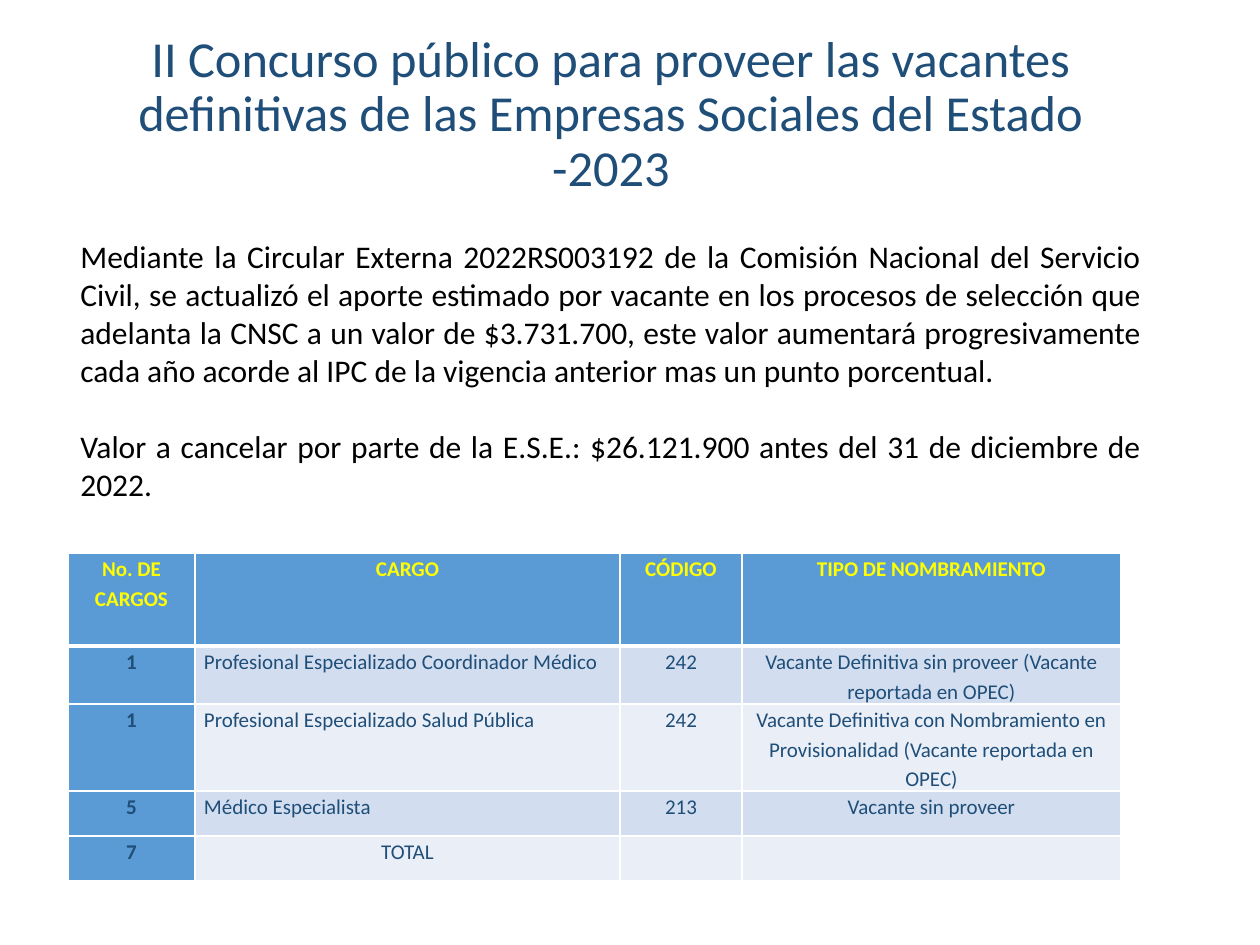
from dataclasses import dataclass
from lxml.etree import SubElement as Sub
from pptx import Presentation
from pptx.dml.color import RGBColor as RGB
from pptx.enum.text import MSO_ANCHOR as Anchor, PP_ALIGN as Align
from pptx.oxml.ns import qn
from pptx.util import Pt

TITLE = ("II Concurso público para proveer las vacantes definitivas "
         "de las Empresas Sociales del Estado -2023")
BODY = [
    "Mediante la Circular Externa 2022RS003192 de la Comisión Nacional del "
    "Servicio Civil, se actualizó el aporte estimado por vacante en los "
    "procesos de selección que adelanta la CNSC a un valor de $3.731.700, "
    "este valor aumentará progresivamente cada año acorde al IPC de la "
    "vigencia anterior mas un punto porcentual.",
    "Valor a cancelar por parte de la E.S.E.: $26.121.900 antes del 31 de "
    "diciembre de 2022.",
]
ROWS = [
    ("No. DE CARGOS", "CARGO", "CÓDIGO", "TIPO DE NOMBRAMIENTO"),
    ("1", "Profesional Especializado Coordinador Médico", "242",
     "Vacante Definitiva sin proveer (Vacante reportada en OPEC)"),
    ("1", "Profesional Especializado Salud Pública", "242",
     "Vacante Definitiva con Nombramiento en Provisionalidad "
     "(Vacante reportada en OPEC)"),
    ("5", "Médico Especialista", "213", "Vacante sin proveer"),
    ("7", "TOTAL", "", ""),
]
WIDTHS = [127, 425, 122, 379]
HEIGHTS = [93, 38, 64, 45, 45]
LEFT, WIDE = 68, 1086


@dataclass(frozen=True)
class Theme:
    font: str = "Calibri"
    navy: str = "1F4E79"
    black: str = "000000"
    yellow: str = "FFFF00"
    white: str = "FFFFFF"
    blue: str = "5B9BD5"
    bands: tuple = ("EAEFF7", "D2DEEF")
    head: float = 28.8
    body: int = 18
    cell: int = 12


T = Theme()


def px(n):
    return round(n * 914400 / 126)


def style(para, size, color, align, bold=False):
    para.alignment = align
    font = para.font
    font.name, font.size, font.bold = T.font, Pt(size), bold
    font.color.rgb = RGB.from_string(color)


def text_box(slide, top, high, texts, size, color, align):
    box = slide.shapes.add_textbox(px(LEFT), px(top), px(WIDE), px(high))
    frame = box.text_frame
    frame.word_wrap = True
    frame.text = "\n".join(texts)
    for para in frame.paragraphs:
        style(para, size, color, align)
    return frame


def edge(cell, head):
    props = cell._tc.get_or_add_tcPr()
    for i, side in enumerate("LRTB"):
        wide = 3 if head and side == "B" else 1
        line = Sub(props, qn(f"a:ln{side}"), w=str(Pt(wide)))
        fill = Sub(line, qn("a:solidFill"))
        Sub(fill, qn("a:srgbClr"), val=T.white)
        props.insert(i, line)


def fill_cell(cell, text, row, col):
    head = row == 0
    strong = head or col == 0
    cell.margin_left = cell.margin_right = px(9)
    cell.margin_top = cell.margin_bottom = 0
    cell.fill.solid()
    tone = T.blue if strong else T.bands[row % 2]
    cell.fill.fore_color.rgb = RGB.from_string(tone)
    edge(cell, head)
    if text:
        cell.text = text
        para = cell.text_frame.paragraphs[0]
        para.line_spacing, para.space_after = 1.15, Pt(8)
        just = col == 1 and 0 < row < len(ROWS) - 1
        style(para, T.cell, T.yellow if head else T.navy,
              Align.JUSTIFY if just else Align.CENTER, strong)


def add_grid(slide):
    grid = slide.shapes.add_table(
        len(ROWS), len(WIDTHS), px(LEFT), px(553),
        px(sum(WIDTHS)), px(sum(HEIGHTS))).table
    grid.first_col = True
    for col, wide in zip(grid.columns, WIDTHS):
        col.width = px(wide)
    for row, high in zip(grid.rows, HEIGHTS):
        row.height = px(high)
    for r, texts in enumerate(ROWS):
        for c, text in enumerate(texts):
            fill_cell(grid.cell(r, c), text, r, c)


def main():
    deck = Presentation()
    deck.slide_width, deck.slide_height = px(1260), px(945)
    slide = deck.slides.add_slide(deck.slide_layouts[6])
    head = text_box(slide, 24, 183, [TITLE], T.head, T.navy, Align.CENTER)
    head.vertical_anchor = Anchor.MIDDLE
    head.paragraphs[0].line_spacing = 0.9
    add_grid(slide)
    body = text_box(slide, 231, 280, BODY, T.body, T.black, Align.JUSTIFY)
    body.paragraphs[1].space_before = Pt(22)
    deck.save("out.pptx")


if __name__ == "__main__":
    main()
